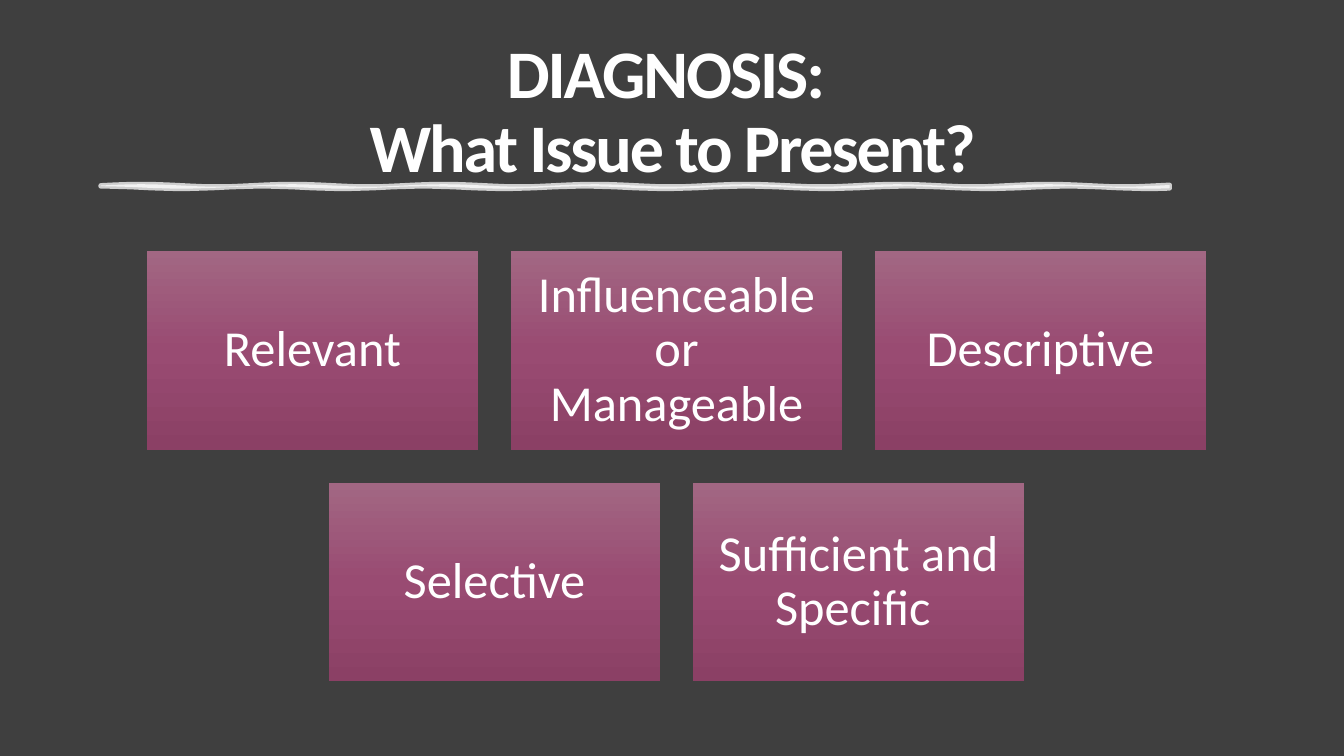
"""Build the diagnosis slide: a title, a sketched rule and five cards."""
from copy import deepcopy
from math import cos, pi
from pptx import Presentation
from pptx.dml.color import RGBColor
from pptx.enum.shapes import MSO_SHAPE as Shape
from pptx.enum.text import MSO_ANCHOR as Anchor, MSO_AUTO_SIZE as Auto, PP_ALIGN as Align
from pptx.oxml.ns import qn
from pptx.util import Inches, Pt
from lxml.etree import SubElement

WHITE, DARK = "FFFFFF", "3F3F3F"
SHADES = [(0, "A26783"), (0.5, "994B72"), (1, "8B4065")]
ROWS = [["Relevant", "Influenceable or Manageable", "Descriptive"],
        ["Selective", "Sufficient and Specific "]]


def paint(color, hue):
    color.rgb = RGBColor.from_string(hue)


def style(frame, size, bold=False):
    frame.word_wrap = True
    frame.auto_size = Auto.NONE
    frame.vertical_anchor = Anchor.MIDDLE
    para = frame.paragraphs[0]
    para.alignment = Align.CENTER
    para.line_spacing = 0.9
    para.font.name = "Calibri"
    para.font.size = Pt(size)
    para.font.bold = bold
    paint(para.font.color, WHITE)


deck = Presentation()
deck.slide_width, deck.slide_height = Inches(13.33), Inches(7.5)
slide = deck.slides.add_slide(deck.slide_layouts[5])
back = slide.background.fill
back.solid()
paint(back.fore_color, DARK)

title = slide.shapes.title
title.left, title.top = Inches(0.92), Inches(0.4)
title.width, title.height = Inches(11.5), Inches(1.45)
title.text_frame.text = "DIAGNOSIS: \vWhat Issue to Present?"
style(title.text_frame, 48.6, bold=True)
head = title.text_frame.paragraphs[0]
head._p.pPr.find(qn("a:defRPr")).set("spc", "-150")

start, end, step, swing = 1, 11.6, 0.1, 0.012
count = round((end - start) / step)
across = [start + i * step for i in range(count + 1)]
upper = [(x, 1.84 - swing * cos(2 * pi * (x - 2.9) / 1.5)) for x in across]
lower = [(x, 1.86 + swing * cos(2 * pi * (x - 8.2) / 1.6)) for x in across]
grain = 1000
trace = [(x * grain, y * grain) for x, y in upper + lower[::-1]]
pen = slide.shapes.build_freeform(*trace[0], scale=Inches(1) / grain)
pen.add_line_segments(trace[1:])
rule = pen.convert_to_shape()
rule.shadow.inherit = False
rule.line.width = Pt(3.5)
for fill in (rule.fill, rule.line.fill):
    fill.solid()
    paint(fill.fore_color, WHITE)
for tint in rule._element.spPr.iter(qn("a:srgbClr")):
    SubElement(tint, qn("a:alpha")).set("val", "75000")

wide, high, gap = 3.28, 1.97, 0.33
center, top, inset = 6.71, 2.49, Inches(0.15)
for r, row in enumerate(ROWS):
    span = len(row) * (wide + gap) - gap
    for c, label in enumerate(row):
        left = center - span / 2 + c * (wide + gap)
        card = slide.shapes.add_shape(
            Shape.RECTANGLE, Inches(left), Inches(top + r * (high + gap)),
            Inches(wide), Inches(high))
        card.shadow.inherit = False
        card.line.fill.background()
        card.fill.gradient()
        card.fill.gradient_angle = 270
        stops = card._element.spPr.find(qn("a:gradFill")).find(qn("a:gsLst"))
        stops.insert(1, deepcopy(stops[0]))
        for stop, (place, hue) in zip(card.fill.gradient_stops, SHADES):
            stop.position = place
            paint(stop.color, hue)
        frame = card.text_frame
        frame.text = label
        frame.margin_left = frame.margin_right = inset
        frame.margin_top = frame.margin_bottom = inset
        style(frame, 36)

deck.save("out.pptx")
